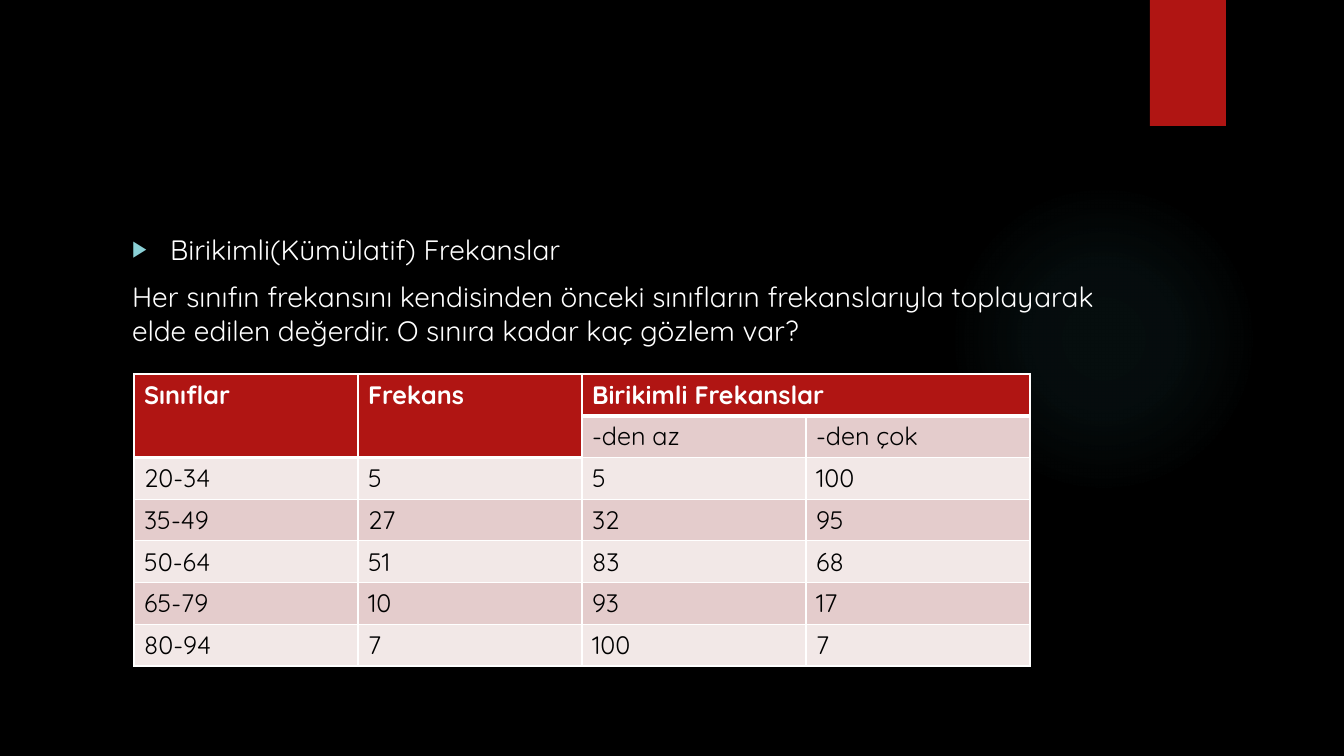
from pptx import Presentation
from pptx.dml.color import RGBColor
from pptx.enum.shapes import MSO_SHAPE
from pptx.enum.text import MSO_ANCHOR, MSO_AUTO_SIZE
from pptx.oxml import parse_xml
from pptx.oxml.ns import nsdecls, qn
from pptx.util import Pt

EMU_PER_PX = 914400 / 100.8
FONT = "Quicksand"
COLORS = {
    "background": "000000",
    "accent": "B01513",
    "glow": "50B9C1",
    "bullet": "8AD0D6",
    "light": "FFFFFF",
    "dark": "000000",
    "band_odd": "E4CCCC",
    "band_even": "F2E8E7",
}


def px(*lengths):
    return [round(length * EMU_PER_PX) for length in lengths]


def style_font(paragraph, size, color, bold=False):
    paragraph.font.name = FONT
    paragraph.font.size = Pt(size)
    paragraph.font.bold = bold
    paragraph.font.color.rgb = RGBColor.from_string(COLORS[color])


presentation = Presentation()
presentation.slide_width, presentation.slide_height = px(1344, 756)
slide = presentation.slides.add_slide(presentation.slide_layouts[1])
slide.background.fill.solid()
slide.background.fill.fore_color.rgb = RGBColor.from_string(COLORS["background"])
title = slide.shapes.title.element
title.getparent().remove(title)

glow = slide.shapes.add_shape(MSO_SHAPE.OVAL, *px(949, 184, 310, 310))
glow.shadow.inherit = False
glow.line.fill.background()
glow.fill.background()
stops = "".join(
    f'<a:gs pos="{position}000"><a:srgbClr val="{COLORS["glow"]}">'
    f'<a:alpha val="{alpha}000"/></a:srgbClr></a:gs>'
    for position, alpha in [(0, 7), (36, 6), (69, 0)]
)
gradient = parse_xml(
    f'<a:gradFill {nsdecls("a")}><a:gsLst>{stops}</a:gsLst><a:path path="circle">'
    '<a:fillToRect l="50000" t="50000" r="50000" b="50000"/></a:path></a:gradFill>'
)
glow_properties = glow.element.spPr
glow_properties.replace(glow_properties.find(qn("a:noFill")), gradient)

ribbon = slide.shapes.add_shape(MSO_SHAPE.RECTANGLE, *px(1150, 0, 76, 126))
ribbon.shadow.inherit = False
ribbon.line.fill.background()
ribbon.fill.solid()
ribbon.fill.fore_color.rgb = RGBColor.from_string(COLORS["accent"])

definition = slide.placeholders[1]
definition.element.getparent().append(definition.element)
definition.left, definition.top, definition.width, definition.height = px(122, 227, 986, 463)
definition_text = definition.text_frame
definition_text.auto_size = MSO_AUTO_SIZE.NONE
definition_text.vertical_anchor = MSO_ANCHOR.TOP
definition_text.text = (
    "Birikimli(Kümülatif) Frekanslar\n"
    "Her sınıfın frekansını kendisinden önceki sınıfların frekanslarıyla toplayarak "
    "elde edilen değerdir. O sınıra kadar kaç gözlem var?"
)
arrow_bullet = [
    f'<a:buClr {nsdecls("a")}><a:srgbClr val="{COLORS["bullet"]}"/></a:buClr>',
    f'<a:buSzPct {nsdecls("a")} val="80000"/>',
    f'<a:buChar {nsdecls("a")} char="▶"/>',
]
no_bullet = [f'<a:buNone {nsdecls("a")}/>']
for paragraph, bullet, indent, space in zip(
    definition_text.paragraphs, [arrow_bullet, no_bullet], px(38, 0), [0, 10]
):
    properties = paragraph._p.get_or_add_pPr()
    properties.set("marL", str(indent))
    properties.set("indent", str(-indent))
    for element in bullet:
        properties.append(parse_xml(element))
    paragraph.space_before = Pt(space)
    style_font(paragraph, 20, "light")

frequencies = [
    ["Sınıflar", "Frekans", "Birikimli Frekanslar", ""],
    ["", "", "-den az", "-den çok"],
    ["20-34", "5", "5", "100"],
    ["35-49", "27", "32", "95"],
    ["50-64", "51", "83", "68"],
    ["65-79", "10", "93", "17"],
    ["80-94", "7", "100", "7"],
]
table = slide.shapes.add_table(7, 4, *px(134, 374, 896, 287)).table
table.horz_banding = False
for row_index, row in enumerate(frequencies):
    for column_index, value in enumerate(row):
        cell = table.cell(row_index, column_index)
        heading = row_index == 0 or (row_index == 1 and column_index < 2)
        band = "band_odd" if row_index % 2 else "band_even"
        cell_properties = cell._tc.get_or_add_tcPr()
        for side in "LRTB":
            width = Pt(3 if heading and side == "B" else 1)
            cell_properties.append(parse_xml(
                f'<a:ln{side} {nsdecls("a")} w="{width}"><a:solidFill>'
                f'<a:srgbClr val="{COLORS["light"]}"/></a:solidFill></a:ln{side}>'
            ))
        cell.fill.solid()
        cell.fill.fore_color.rgb = RGBColor.from_string(COLORS["accent" if heading else band])
        cell.text = value
        style_font(cell.text_frame.paragraphs[0], 18, "light" if heading else "dark", heading)
for first, last in [((0, 0), (1, 0)), ((0, 1), (1, 1)), ((0, 2), (0, 3))]:
    table.cell(*first).merge(table.cell(*last))

presentation.save("out.pptx")
